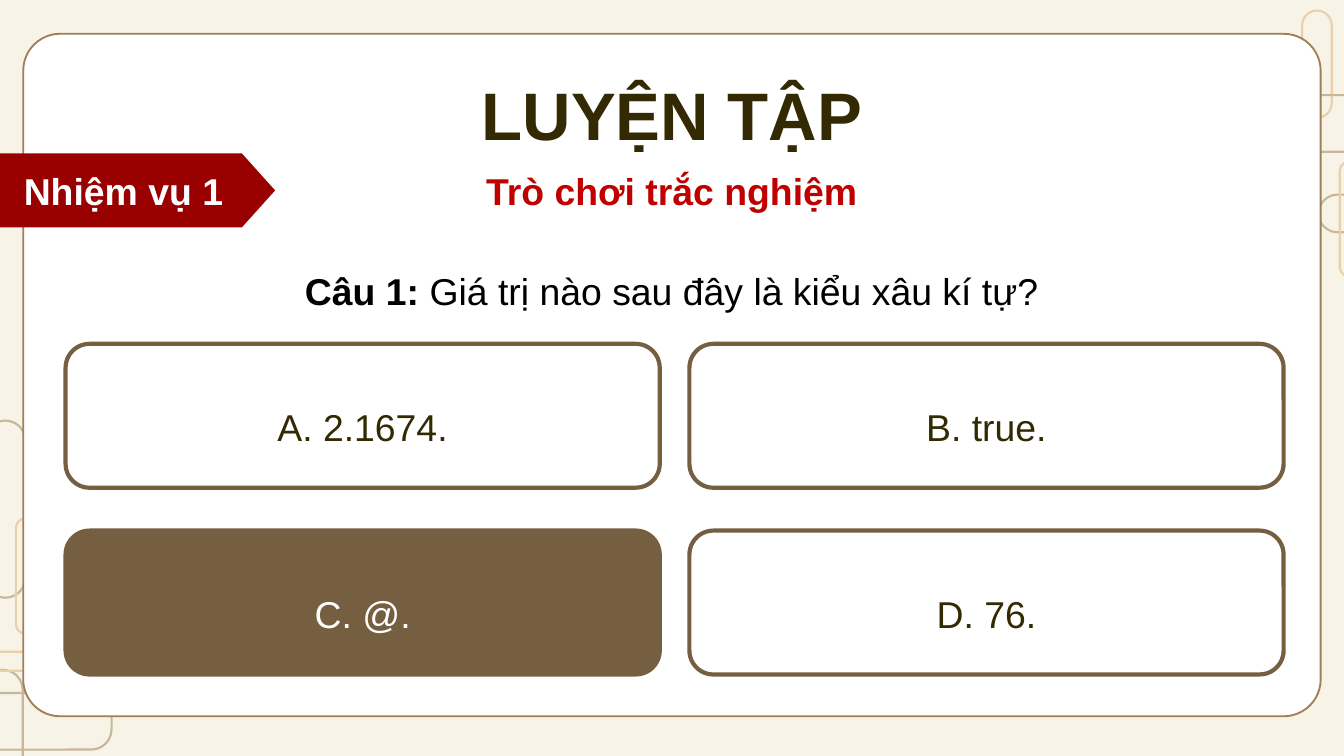
from lxml import etree
from pptx import Presentation
from pptx.dml.color import RGBColor
from pptx.enum.shapes import MSO_SHAPE
from pptx.enum.text import MSO_ANCHOR, PP_ALIGN
from pptx.oxml.ns import qn
from pptx.util import Cm, Pt

CREAM = RGBColor(0xF7, 0xF4, 0xE7)
WHITE = RGBColor(0xFF, 0xFF, 0xFF)
BLACK = RGBColor(0x00, 0x00, 0x00)
TAN = RGBColor(0x9E, 0x7F, 0x56)
PEACH = RGBColor(0xE2, 0xAE, 0x74)
BROWN = RGBColor(0x76, 0x5F, 0x40)
DARK = RGBColor(0x33, 0x2A, 0x03)
RED = RGBColor(0xC0, 0x00, 0x00)
MAROON = RGBColor(0x99, 0x00, 0x00)

presentation = Presentation()
presentation.slide_width = Cm(25.4)
presentation.slide_height = Cm(14.29)
slide = presentation.slides.add_slide(presentation.slide_layouts[6])
slide.background.fill.solid()
slide.background.fill.fore_color.rgb = CREAM


def add_box(kind, box, fill=None, line=None, width=1, corner=None):
    shape = slide.shapes.add_shape(kind, *[Cm(value) for value in box])
    shape.shadow.inherit = False
    if fill is None:
        shape.fill.background()
    else:
        shape.fill.solid()
        shape.fill.fore_color.rgb = fill
    if line is None:
        shape.line.fill.background()
    else:
        shape.line.color.rgb = line
        shape.line.width = Pt(width)
    if corner is not None:
        shape.adjustments[0] = corner
    return shape


def write(shape, text, color, size=20, bold=False, align=PP_ALIGN.CENTER, spacing=None):
    frame = shape.text_frame
    frame.word_wrap = True
    frame.text = text
    paragraph = frame.paragraphs[0]
    paragraph.alignment = align
    paragraph.line_spacing = spacing
    font = paragraph.runs[0].font
    font.name = "Arial"
    font.size = Pt(size)
    font.bold = bold
    font.color.rgb = color
    return paragraph


ornaments = [
    ((24.92, 3.68, 2.74, 0.71), TAN, 0.5),
    ((25.32, 3.05, 0.36, 2.18), PEACH, 0.5),
    ((24.61, 0.2, 0.56, 2.03), PEACH, 0.5),
    ((24.31, 1.8, 3.2, 1.07), TAN, 0.36),
    ((-1.09, 13.1, 3.2, 1.07), TAN, 0.36),
    ((-0.33, 12.66, 0.76, 3.35), TAN, 0.5),
    ((-1.04, 12.32, 2.18, 0.36), PEACH, 0.5),
    ((-0.28, 7.95, 0.76, 3.35), TAN, 0.5),
    ((0.3, 9.8, 0.36, 2.18), PEACH, 0.5),
]
for box, color, corner in ornaments:
    add_box(MSO_SHAPE.ROUNDED_RECTANGLE, box, line=color, width=1.12, corner=corner)

veil = add_box(MSO_SHAPE.RECTANGLE, (0, 0, 25.4, 14.29), CREAM)
veil_color = veil.element.spPr.find(qn("a:solidFill"))[0]
etree.SubElement(veil_color, qn("a:alpha")).set("val", "47000")

add_box(MSO_SHAPE.ROUNDED_RECTANGLE, (0.44, 0.64, 24.52, 12.9), WHITE, TAN, 1, 0.054)

title = slide.shapes.add_textbox(Cm(0), Cm(0.94), Cm(25.4), Cm(1.65))
title.text_frame.vertical_anchor = MSO_ANCHOR.MIDDLE
title.text_frame.margin_top = title.text_frame.margin_bottom = Cm(0.25)
write(title, "LUYỆN TẬP", DARK, 36, True, spacing=1.5)

subtitle = slide.shapes.add_textbox(Cm(0), Cm(3.05), Cm(25.4), Cm(1.12))
write(subtitle, "Trò chơi trắc nghiệm", RED, bold=True)

tag = add_box(MSO_SHAPE.PENTAGON, (0, 2.9, 5.2, 1.4), MAROON, corner=0.449)
tag.text_frame.margin_left = Cm(0.45)
write(tag, "Nhiệm vụ 1", WHITE, bold=True, align=PP_ALIGN.LEFT)

question = slide.shapes.add_textbox(Cm(0), Cm(4.53), Cm(25.4), Cm(1.37))
paragraph = write(question, "Câu 1: ", BLACK, bold=True, spacing=1.5)
run = paragraph.add_run()
run.text = "Giá trị nào sau đây là kiểu xâu kí tự?"
run.font.name = "Arial"
run.font.size = Pt(20)
run.font.color.rgb = BLACK

answers = ["A. 2.1674.", "B. true.", "C. @.", "D. 76."]
correct = 2
for index, answer in enumerate(answers):
    row, column = divmod(index, 2)
    box = (1.24 + 11.79 * column, 6.5 + 3.53 * row, 11.23, 2.72)
    fill, color = (BROWN, WHITE) if index == correct else (WHITE, DARK)
    option = add_box(MSO_SHAPE.ROUNDED_RECTANGLE, box, fill, BROWN, 2.25)
    write(option, answer, color, spacing=1.5)

presentation.save("out.pptx")
